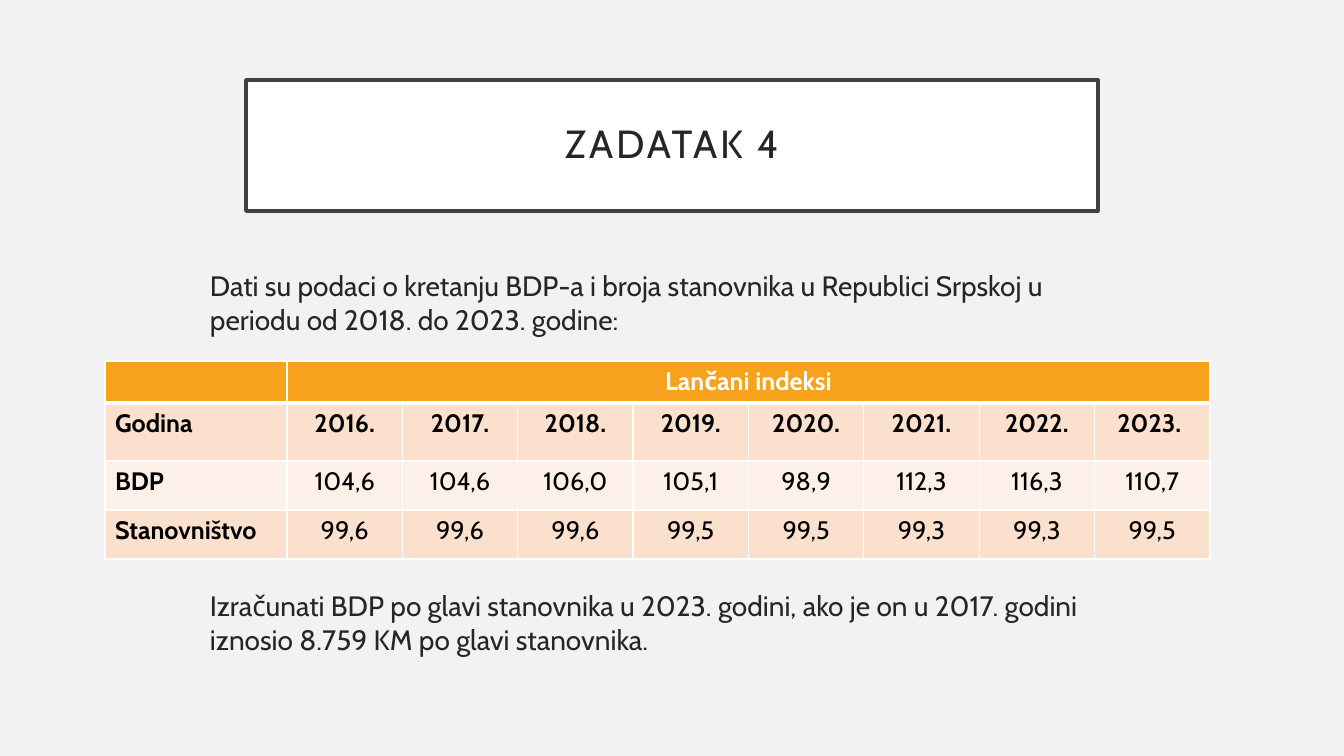
from lxml import etree
from pptx import Presentation
from pptx.dml.color import RGBColor
from pptx.enum.shapes import MSO_SHAPE
from pptx.enum.text import MSO_ANCHOR, PP_ALIGN
from pptx.oxml.ns import qn
from pptx.util import Emu, Pt

EMU_PER_PX = 914400 / 100.8
EMU_PER_PT = 12700
RECTANGLE = MSO_SHAPE.RECTANGLE
MIDDLE, TOP = MSO_ANCHOR.MIDDLE, MSO_ANCHOR.TOP
LEFT, CENTER = PP_ALIGN.LEFT, PP_ALIGN.CENTER

COLORS = {
    "background": "F2F2F2",
    "white": "FFFFFF",
    "frame": "404040",
    "text": "262626",
    "black": "000000",
    "header": "F6A21D",
    "band_dark": "FBE0CD",
    "band_light": "FDF0E8",
}

HEADING = "Lančani indeksi"
YEARS = ["2016.", "2017.", "2018.", "2019.", "2020.", "2021.", "2022.", "2023. "]
GDP = ["104,6", "104,6", "106,0", "105,1", "98,9", "112,3", "116,3", "110,7"]
POPULATION = ["99,6", "99,6", "99,6", "99,5", "99,5", "99,3", "99,3", "99,5"]
INDEX_ROWS = [
    ["", HEADING] + [""] * (len(YEARS) - 1),
    ["Godina"] + YEARS,
    ["BDP"] + GDP,
    ["Stanovništvo"] + POPULATION,
]
ROW_FILLS = ["header", "band_dark", "band_light", "band_dark"]
ROW_HEIGHTS = [42, 58, 49, 49]
TABLE_WIDTH, LABEL_WIDTH = 1105, 182


def px(length):
    return Emu(round(length * EMU_PER_PX))


def rgb(name):
    return RGBColor.from_string(COLORS[name])


class Deck:
    font_name = "Cabin"

    def __init__(self, width, height):
        self.presentation = Presentation()
        self.presentation.slide_width = px(width)
        self.presentation.slide_height = px(height)
        blank = self.presentation.slide_layouts[6]
        self.slide = self.presentation.slides.add_slide(blank)
        background = self.slide.background.fill
        background.solid()
        background.fore_color.rgb = rgb("background")

    def put_text(self, frame, text, color, size, bold=False, align=LEFT):
        paragraph = frame.paragraphs[0]
        paragraph.alignment = align
        run = paragraph.add_run()
        run.text = text
        formats = {"name": self.font_name, "size": Pt(size), "bold": bold}
        for attribute, value in formats.items():
            setattr(run.font, attribute, value)
        run.font.color.rgb = rgb(color)
        return paragraph

    def title(self, text, box):
        banner = self.slide.shapes.add_shape(RECTANGLE, *map(px, box))
        banner.shadow.inherit = False
        banner.fill.solid()
        banner.fill.fore_color.rgb = rgb("white")
        banner.line.color.rgb = rgb("frame")
        banner.line.width = Pt(2.5)
        frame = banner.text_frame
        formats = {"word_wrap": True, "vertical_anchor": MIDDLE}
        formats |= {f"margin_{side}": px(20) for side in ("left", "top", "right", "bottom")}
        for attribute, value in formats.items():
            setattr(frame, attribute, value)
        paragraph = self.put_text(frame, text, "text", 28, align=CENTER)
        paragraph.line_spacing = 0.9
        paragraph.runs[0].font._element.set("spc", "200")

    def body(self, text, box):
        frame = self.slide.shapes.add_textbox(*map(px, box)).text_frame
        frame.word_wrap = True
        frame.vertical_anchor = TOP
        self.put_text(frame, text, "text", 20)

    def cell_borders(self, cell, bottom_width):
        """Draw white cell edges; call before the fill, which must follow them."""
        properties = cell._tc.get_or_add_tcPr()
        for edge, width in {"lnL": 1, "lnR": 1, "lnT": 1, "lnB": bottom_width}.items():
            line = etree.SubElement(properties, qn(f"a:{edge}"), w=str(width * EMU_PER_PT))
            fill = etree.SubElement(line, qn("a:solidFill"))
            etree.SubElement(fill, qn("a:srgbClr"), val=COLORS["white"])

    def index_table(self, left, top):
        size = (TABLE_WIDTH, sum(ROW_HEIGHTS))
        table = self.slide.shapes.add_table(
            len(INDEX_ROWS), len(INDEX_ROWS[0]), *map(px, (left, top, *size))
        ).table
        table.horz_banding = False
        year_width = (TABLE_WIDTH - LABEL_WIDTH) / len(YEARS)
        for number, column in enumerate(table.columns):
            column.width = px(year_width if number else LABEL_WIDTH)
        for row, height in zip(table.rows, ROW_HEIGHTS):
            row.height = px(height)
        table.cell(0, 1).merge(table.cell(0, len(YEARS)))

        for row_number, texts in enumerate(INDEX_ROWS):
            is_header = row_number == 0
            for column_number, text in enumerate(texts):
                cell = table.cell(row_number, column_number)
                self.cell_borders(cell, 3 if is_header else 1)
                cell.fill.solid()
                cell.fill.fore_color.rgb = rgb(ROW_FILLS[row_number])
                if text:
                    self.put_text(
                        cell.text_frame, text, "white" if is_header else "black", 18,
                        bold=row_number < 2 or column_number == 0,
                        align=CENTER if column_number else LEFT,
                    )


def main():
    deck = Deck(1344, 756)
    deck.title("ZADATAK 4", (246, 80, 852, 131))
    deck.body(
        "Dati su podaci o kretanju BDP-a i broja stanovnika u Republici Srpskoj u "
        "periodu od 2018. do 2023. godine:",
        (200, 264, 945, 78),
    )
    deck.body(
        "Izračunati BDP po glavi stanovnika u 2023. godini, ako je on u 2017. godini "
        "iznosio 8.759 KM po glavi stanovnika.",
        (200, 584, 945, 78),
    )
    deck.index_table(105, 361)
    deck.presentation.save("out.pptx")


if __name__ == "__main__":
    main()
